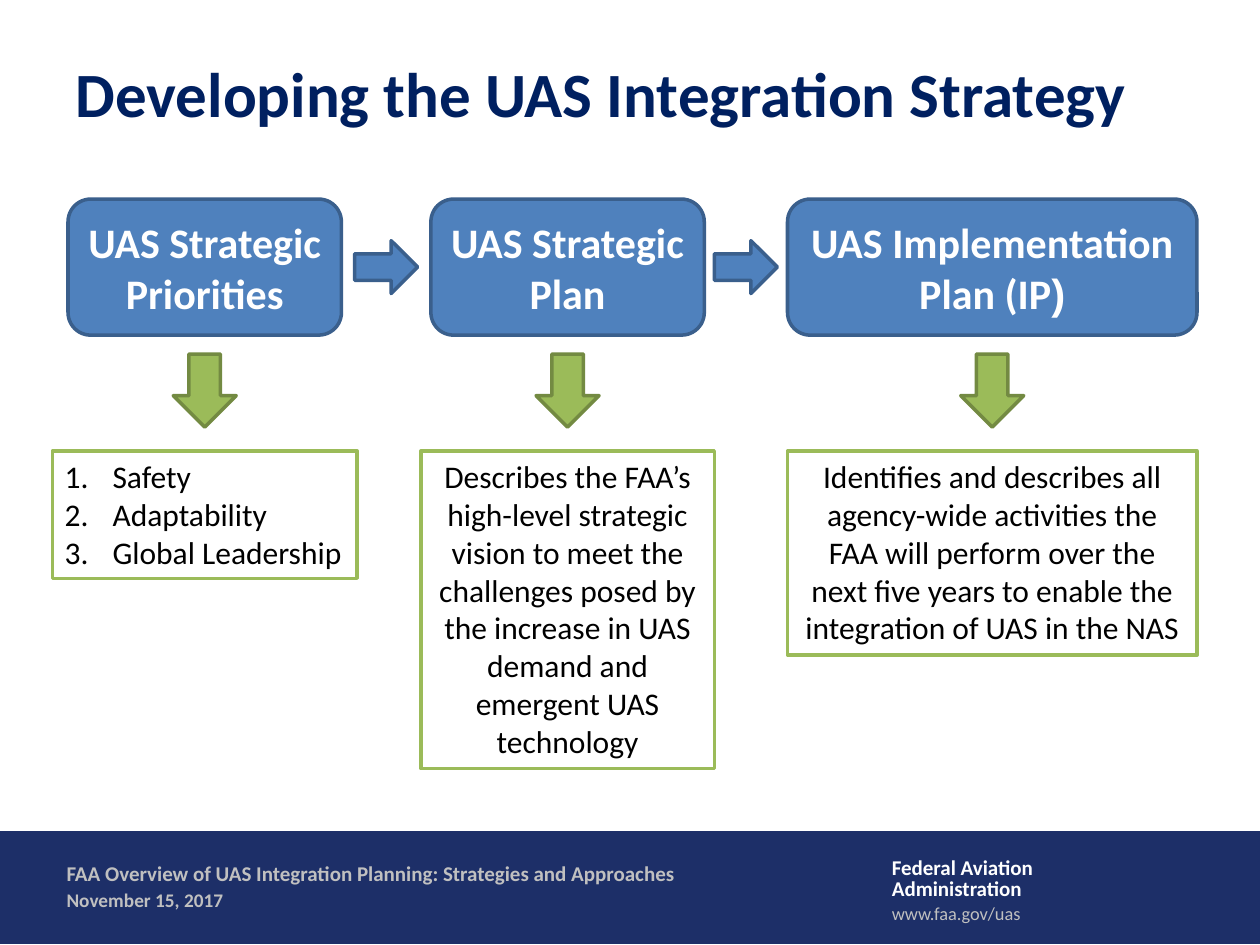
import pptx
import pptx.util
import pptx.dml.color
import pptx.enum.shapes
import pptx.enum.text
import pptx.oxml.ns
import lxml.etree

RGB = pptx.dml.color.RGBColor
KIND = pptx.enum.shapes.MSO_SHAPE
ALIGN = pptx.enum.text.PP_ALIGN
ANCHOR = pptx.enum.text.MSO_ANCHOR
inch = pptx.util.Inches

NAVY = RGB(0x00, 0x20, 0x60)
BAND = RGB(0x1D, 0x2F, 0x68)
BLUE = RGB(0x4F, 0x81, 0xBD)
BLUE_EDGE = RGB(0x3A, 0x5F, 0x8C)
GREEN = RGB(0x9B, 0xBB, 0x59)
GREEN_EDGE = RGB(0x73, 0x8A, 0x42)
GRAY = RGB(0xC0, 0xC0, 0xC0)
WHITE = RGB(0xFF, 0xFF, 0xFF)
BLACK = RGB(0, 0, 0)

# Content: each step has a card and a note below it
TITLE = "Developing the UAS Integration Strategy"
STEPS = [
    dict(left=0.54, width=2.17, card="UAS Strategic Priorities",
         note=["Safety", "Adaptability", "Global Leadership"],
         note_w=2.42, note_h=1.01, numbered=True),
    dict(left=3.42, width=2.17, card="UAS Strategic Plan",
         note=["Describes the FAA’s high-level strategic vision to meet the "
               "challenges posed by the increase in UAS demand and emergent "
               "UAS technology"],
         note_w=2.33, note_h=2.52, numbered=False),
    dict(left=6.25, width=3.25, card="UAS Implementation Plan (IP", tail=")",
         note=["Identifies and describes all agency-wide activities the FAA "
               "will perform over the next five years to enable the "
               "integration of UAS in the NAS"],
         note_w=3.25, note_h=1.62, numbered=False),
]
# Footer: lines, place, format
FOOTER = [
    (["Federal Aviation", "Administration"], (6.98, 6.76, 1.34, 0.45),
     dict(size=12, color=WHITE, bold=True, space=0.85, wrap=False)),
    (["www.faa.gov/uas"], (6.98, 7.11, 2.52, 0.3), dict(size=10.5, color=GRAY)),
    (["FAA Overview of UAS Integration Planning: Strategies and Approaches"],
     (0.43, 6.78, 5.23, 0.3), dict(size=12, color=GRAY, bold=True)),
    (["November 15, 2017"], (0.43, 7, 5.23, 0.29),
     dict(size=11, color=GRAY, bold=True)),
]
# Rows of the flow
CARD_TOP, CARD_H = 1.58, 1.08
DOWN_TOP, NOTE_TOP = 2.81, 3.58
NEXT_W, NEXT_H = 0.5, 0.42
DOWN_W, DOWN_H = 0.5, 0.58


def write(shape, lines, size=18, color=BLACK, bold=False, align=ALIGN.LEFT,
          anchor=ANCHOR.TOP, space=None, wrap=True, numbered=False):
    frame = shape.text_frame
    frame.word_wrap = wrap
    frame.vertical_anchor = anchor
    for i, line in enumerate(lines):
        para = frame.add_paragraph() if i else frame.paragraphs[0]
        para.alignment = align
        if space:
            para.line_spacing = space
        if numbered:
            props = para._p.get_or_add_pPr()
            props.set("marL", str(inch(0.38)))
            props.set("indent", str(-inch(0.38)))
            mark = lxml.etree.SubElement(
                props, pptx.oxml.ns.qn("a:buAutoNum"))
            mark.set("type", "arabicPeriod")
        run = para.add_run()
        run.text = line
        style(run.font, size, color, bold)


def style(font, size, color, bold, name="Calibri"):
    font.name, font.size, font.bold = name, pptx.util.Pt(size), bold
    font.color.rgb = color


def draw(slide, kind, place, fill, edge, weight=2):
    shape = slide.shapes.add_shape(kind, *map(inch, place))
    shape.shadow.inherit = False
    shape.fill.solid()
    shape.fill.fore_color.rgb = fill
    shape.line.color.rgb = edge
    shape.line.width = pptx.util.Pt(weight)
    return shape


def main():
    deck = pptx.Presentation()
    deck.slide_width, deck.slide_height = inch(10), inch(7.5)
    slide = deck.slides.add_slide(deck.slide_layouts[5])

    # Footer band
    draw(slide, KIND.RECTANGLE, (0, 6.6, 10, 0.89), BAND, BAND, 0.75)
    for lines, place, form in FOOTER:
        write(slide.shapes.add_textbox(*map(inch, place)), lines, **form)

    # Title
    title = slide.shapes.title
    title.left, title.top, title.width, title.height = map(
        inch, (0.5, 0.3, 9, 0.87))
    write(title, [TITLE], size=36, color=NAVY, bold=True, anchor=ANCHOR.MIDDLE)

    # Cards, down arrows and notes share a centre line
    for step in STEPS:
        mid = step["left"] + step["width"] / 2
        card = draw(slide, KIND.ROUNDED_RECTANGLE,
                    (step["left"], CARD_TOP, step["width"], CARD_H),
                    BLUE, BLUE_EDGE)
        write(card, [step["card"]], size=24, color=WHITE, bold=True,
              align=ALIGN.CENTER, anchor=ANCHOR.MIDDLE)
        if "tail" in step:
            run = card.text_frame.paragraphs[0].add_run()
            run.text = step["tail"]
            style(run.font, 24, WHITE, True, "Arial")
        draw(slide, KIND.DOWN_ARROW,
             (mid - DOWN_W / 2, DOWN_TOP, DOWN_W, DOWN_H), GREEN, GREEN_EDGE)
        note = draw(slide, KIND.RECTANGLE,
                    (mid - step["note_w"] / 2, NOTE_TOP,
                     step["note_w"], step["note_h"]), WHITE, GREEN)
        write(note, step["note"], numbered=step["numbered"],
              align=ALIGN.LEFT if step["numbered"] else ALIGN.CENTER)

    # Right arrows sit midway between neighbouring cards
    for one, two in zip(STEPS, STEPS[1:]):
        mid = (one["left"] + one["width"] + two["left"]) / 2
        draw(slide, KIND.RIGHT_ARROW,
             (mid - NEXT_W / 2, CARD_TOP + (CARD_H - NEXT_H) / 2,
              NEXT_W, NEXT_H), BLUE, BLUE_EDGE)

    deck.save("out.pptx")


if __name__ == "__main__":
    main()
